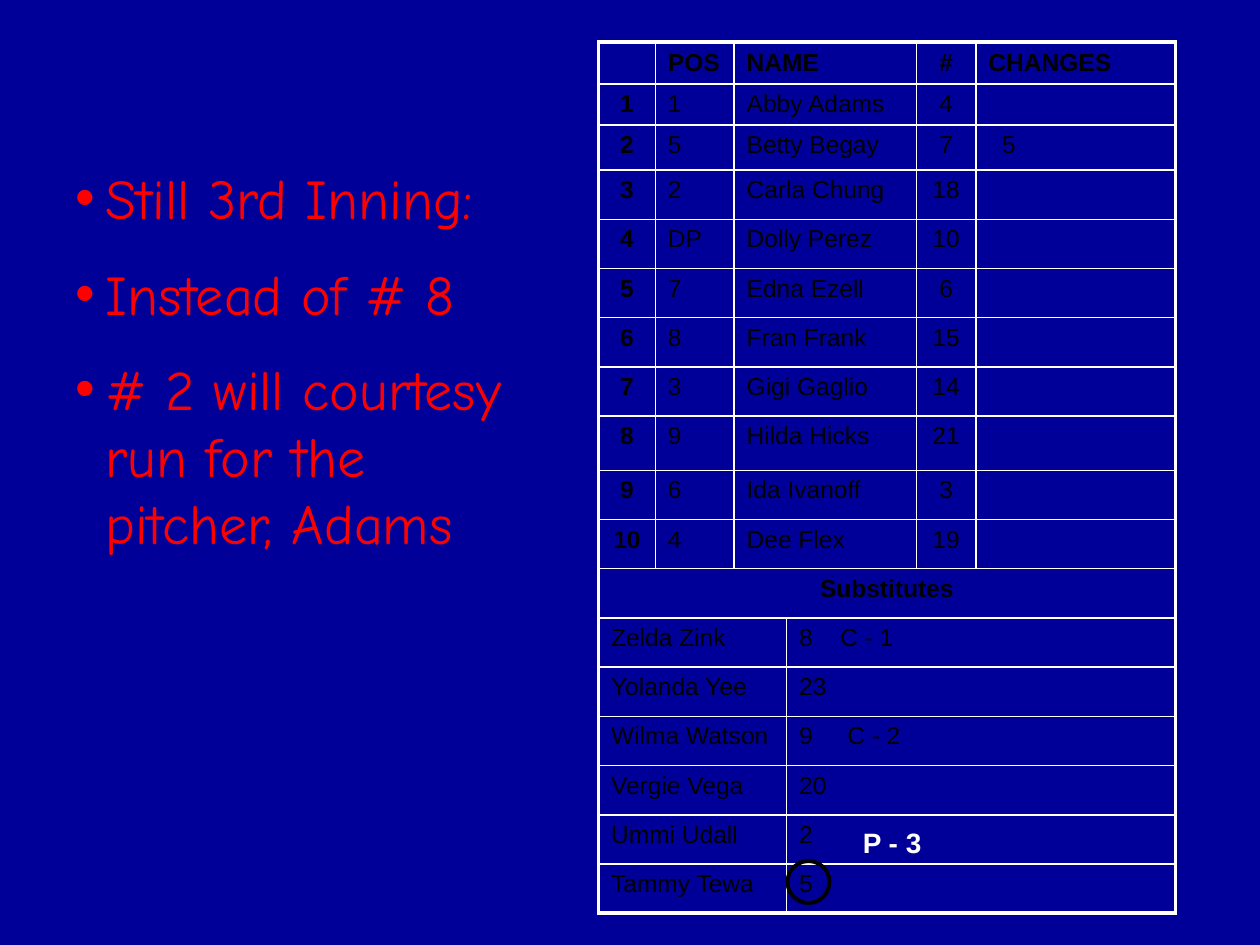
import lxml.etree
import pptx
import pptx.dml.color
import pptx.enum.shapes
import pptx.enum.text
import pptx.oxml.ns
import pptx.util

Pt = pptx.util.Pt
ALIGN = pptx.enum.text.PP_ALIGN
ANCHOR = pptx.enum.text.MSO_ANCHOR
qn = pptx.oxml.ns.qn

COLUMN_WIDTHS = [32.5, 45, 30, 74.2, 34, 114]
ROW_HEIGHTS = [24, 23.5, 25.7] + [28.13] * 5 + [31] + [28.13] * 9
PLAYERS = [
    ("1", "Abby Adams", "4", ""),
    ("5", "Betty Begay", "7", "5"),
    ("2", "Carla Chung", "18", ""),
    ("DP", "Dolly Perez", "10", ""),
    ("7", "Edna Ezell", "6", ""),
    ("8", "Fran Frank", "15", ""),
    ("3", "Gigi Gaglio", "14", ""),
    ("9", "Hilda Hicks", "21", ""),
    ("6", "Ida Ivanoff", "3", ""),
    ("4", "Dee Flex", "19", ""),
]
SUBSTITUTES = [
    ("Zelda Zink", "8\tC - 1", 23.5),
    ("Yolanda Yee", "23", None),
    ("Wilma Watson", "9\tC - 2", 27.5),
    ("Vergie Vega", "20", None),
    ("Ummi Udall", "2", None),
    ("Tammy Tewa", "5", None),
]


def color(hex_string):
    """Return the colour for a hex string."""
    return pptx.dml.color.RGBColor.from_string(hex_string)


def style_paragraph(para, font_name, size, hex_string, bold=False, align=ALIGN.LEFT):
    """Set the font and alignment of one paragraph."""
    para.alignment = align
    para.font.name = font_name
    para.font.size = Pt(size)
    para.font.bold = bold
    para.font.color.rgb = color(hex_string)


def place(shape, box):
    """Move a shape to a box of left, top, width and height in points."""
    shape.left, shape.top, shape.width, shape.height = (Pt(value) for value in box)


def add_instructions(page, box, lines):
    """Fill the body placeholder with the bulleted instructions."""
    page.shapes.title.element.getparent().remove(page.shapes.title.element)
    body = page.placeholders[1]
    place(body, box)
    frame = body.text_frame
    frame.text = "\n".join(lines)
    frame.word_wrap = True
    frame.auto_size = pptx.enum.text.MSO_AUTO_SIZE.NONE
    frame.vertical_anchor = ANCHOR.TOP
    for para in frame.paragraphs:
        properties = para._p.get_or_add_pPr()
        properties.set("marL", str(Pt(17)))
        properties.set("indent", str(-Pt(17)))
        para.space_before = Pt(0)
        para.space_after = Pt(16)
        lxml.etree.SubElement(properties, qn("a:buChar"), char="•")
        style_paragraph(para, "Comic Neue", 32, "FF0000")


def set_borders(cell, widths):
    """Draw white borders of the given widths: left, right, top, bottom."""
    properties = cell._tc.get_or_add_tcPr()
    for index, (side, width) in enumerate(zip("LRTB", widths)):
        line = lxml.etree.Element(qn(f"a:ln{side}"), w=str(Pt(width)))
        fill = lxml.etree.SubElement(line, qn("a:solidFill"))
        lxml.etree.SubElement(fill, qn("a:srgbClr"), val="FFFFFF")
        properties.insert(index, line)


def fill_cell(cell, text, bold=False, align=ALIGN.LEFT, tab=None):
    """Write one cell, with an optional tab stop in points."""
    cell.text = text
    para = cell.text_frame.paragraphs[0]
    if tab:
        stops = lxml.etree.SubElement(para._p.get_or_add_pPr(), qn("a:tabLst"))
        lxml.etree.SubElement(stops, qn("a:tab"), pos=str(Pt(tab)), algn="l")
    style_paragraph(para, "Arial", 14, "000000", bold, align)
    if not text:
        cell.margin_top = cell.margin_bottom = Pt(0)


def frame_cells(table):
    """Clear all fills and draw thin inner and thick outer borders."""
    last_row, last_column = len(ROW_HEIGHTS) - 1, len(COLUMN_WIDTHS) - 1
    for row in range(last_row + 1):
        for column in range(last_column + 1):
            cell = table.cell(row, column)
            cell.fill.background()
            if cell.is_spanned:
                continue
            span = cell.span_width if cell.is_merge_origin else 1
            edges = (column == 0, column + span - 1 == last_column, row == 0, row == last_row)
            set_borders(cell, [2.25 if edge else 1 for edge in edges])


def add_lineup(page, box):
    """Add the lineup card with its players and substitutes."""
    shape = page.shapes.add_table(
        len(ROW_HEIGHTS), len(COLUMN_WIDTHS), *(Pt(value) for value in box))
    table = shape.table
    table.first_row = table.horz_banding = False
    for column, width in zip(table.columns, COLUMN_WIDTHS):
        column.width = Pt(width)
    for row, height in zip(table.rows, ROW_HEIGHTS):
        row.height = Pt(height)

    lineup = [("", "POS", "NAME", "#", "CHANGES")]
    lineup += [(str(order), *player) for order, player in enumerate(PLAYERS, 1)]
    for row, values in enumerate(lineup):
        table.cell(row, 2).merge(table.cell(row, 3))
        for column, text in zip((0, 1, 2, 4, 5), values):
            cell = table.cell(row, column)
            align = ALIGN.CENTER if column in (0, 4) else ALIGN.LEFT
            fill_cell(cell, text, row == 0 or column == 0, align)
            if row == 0:
                cell.vertical_anchor = ANCHOR.MIDDLE
            elif column == 5 and text:
                cell.margin_left = Pt(15)

    heading_row = len(lineup)
    table.cell(heading_row, 0).merge(table.cell(heading_row, 5))
    fill_cell(table.cell(heading_row, 0), "Substitutes", True, ALIGN.CENTER)
    for row, (name, number, tab) in enumerate(SUBSTITUTES, heading_row + 1):
        table.cell(row, 0).merge(table.cell(row, 2))
        table.cell(row, 3).merge(table.cell(row, 5))
        fill_cell(table.cell(row, 0), name)
        fill_cell(table.cell(row, 3), number, tab=tab)
    frame_cells(table)


def add_entry(page, box, text):
    """Add the new lineup entry in white."""
    entry = page.shapes.add_textbox(*(Pt(value) for value in box))
    entry.text_frame.word_wrap = True
    entry.text_frame.text = text
    style_paragraph(entry.text_frame.paragraphs[0], "Arial", 16, "FFFFFF", True)


def add_number_circle(page, box):
    """Circle a substitute's number."""
    circle = page.shapes.add_shape(
        pptx.enum.shapes.MSO_SHAPE.OVAL, *(Pt(value) for value in box))
    circle.shadow.inherit = False
    circle.fill.background()
    circle.line.color.rgb = color("000000")
    circle.line.width = Pt(2.25)


def main():
    """Build and save the deck."""
    deck = pptx.Presentation()
    deck.slide_width, deck.slide_height = Pt(720), Pt(540)
    page = deck.slides.add_slide(deck.slide_layouts[1])
    page.background.fill.solid()
    page.background.fill.fore_color.rgb = color("000099")
    add_instructions(page, (36, 90, 264, 364), [
        "Still 3rd Inning:",
        "Instead of # 8",
        "# 2 will courtesy run for the pitcher, Adams",
    ])
    add_lineup(page, (342, 24, sum(COLUMN_WIDTHS), sum(ROW_HEIGHTS)))
    add_entry(page, (486, 468, 54, 26.5), "P - 3")
    add_number_circle(page, (450, 492, 24, 24))
    deck.save("out.pptx")


if __name__ == "__main__":
    main()
